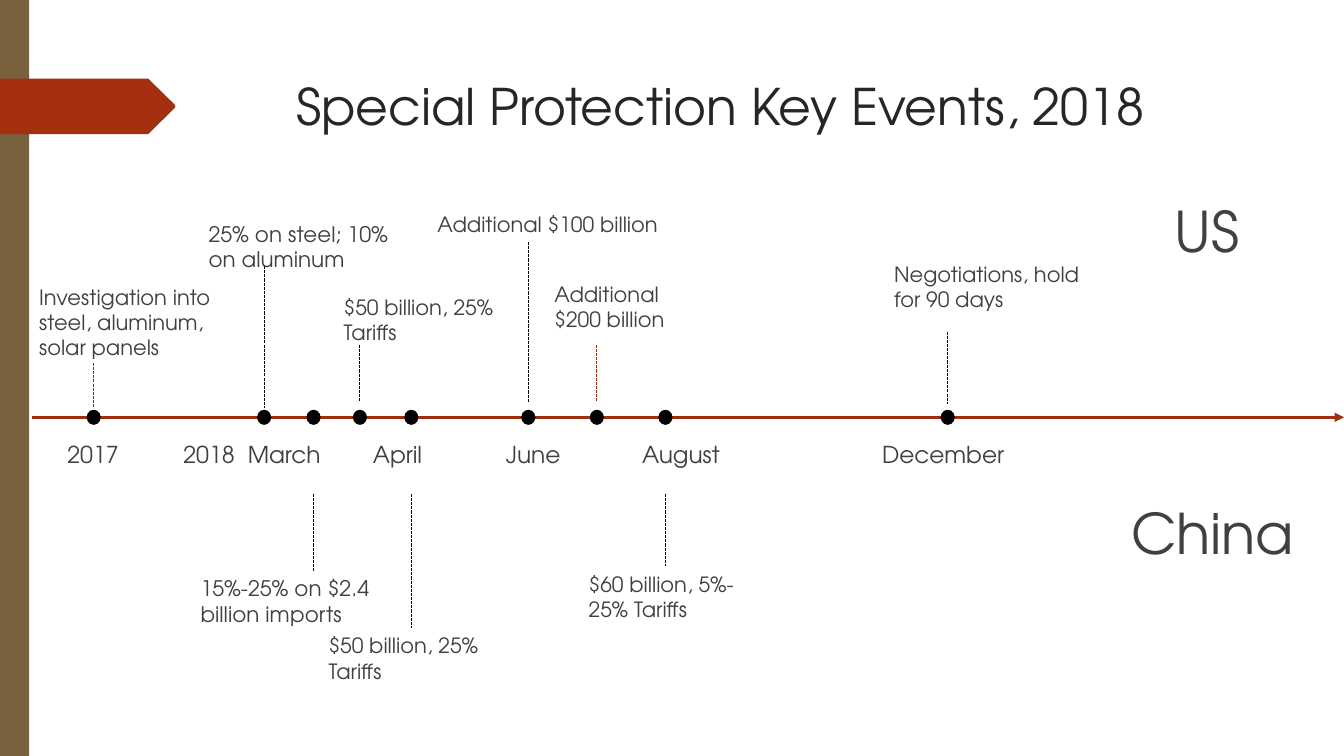
from collections import namedtuple
from lxml import etree
from pptx import Presentation
from pptx.dml.color import RGBColor
from pptx.enum.dml import MSO_LINE
from pptx.enum.shapes import MSO_CONNECTOR, MSO_SHAPE
from pptx.oxml.ns import qn
from pptx.util import Inches, Pt

FONT = "TeX Gyre Adventor"
WHITE = RGBColor(0xFF, 0xFF, 0xFF)
BROWN = RGBColor(0x77, 0x62, 0x3D)
RUST = RGBColor(0xA5, 0x30, 0x10)
DARK = RGBColor(0x9E, 0x2E, 0x0F)
BLACK = RGBColor(0, 0, 0)
INK = RGBColor(0x26, 0x26, 0x26)
GREY = RGBColor(0x40, 0x40, 0x40)

CELL = Inches(0.1)
COLS, ROWS = 133.3, 75
AXIS = 21.4
DOT_W, DOT_H = 1.4, 1.5

Box = namedtuple("Box", "left top width height")
Event = namedtuple("Event", "col stem start end text box size")

EVENTS = [
    Event(9.3, DARK, 16, 20.5, "Investigation into steel, aluminum, solar panels",
          Box(2.9, 7.7, 19.9, 7.1), 15),
    Event(26.2, BLACK, 6.4, 20.5, "25% on steel; 10% on aluminum",
          Box(19.7, 1.4, 19.9, 5.5), 15.3),
    Event(31.1, BLACK, 29, 36.6, "15%-25% on $2.4 billion imports",
          Box(18.9, 36.6, 19.9, 5.5), 15.3),
    Event(35.7, BLACK, 14.2, 19.9, "$50 billion, 25% Tariffs",
          Box(33.1, 8.7, 19.9, 5.5), 15),
    Event(40.8, BLACK, 29, 42.3, "$50 billion, 25% Tariffs",
          Box(31.6, 42.3, 19.9, 5.5), 15),
    Event(52.4, BLACK, 4, 19.9, "Additional $100 billion",
          Box(42.4, 0.5, 24.2, 5.5), 15),
    Event(59.2, DARK, 14.2, 19.9, "Additional $200 billion",
          Box(54, 7.4, 16.5, 5.5), 15),
    Event(66, BLACK, 29, 36.2, "$60 billion, 5%-25% Tariffs",
          Box(57.4, 36.2, 19.9, 5.5), 15),
    Event(94, BLACK, 12.9, 20.1, "Negotiations, hold for 90 days",
          Box(87.7, 5.4, 21.6, 5.5), 15),
]
MONTHS = [("2018", 11.5), ("March", 17.9), ("April", 30.3), ("June", 43.5),
          ("August", 57), ("December", 80.8)]


def cells(*counts):
    return [round(count * CELL) for count in counts]


def within(box, part):
    return Box(box.left + part.left, box.top + part.top, part.width, part.height)


def paint(shape, color):
    shape.shadow.inherit = False
    shape.fill.solid()
    shape.fill.fore_color.rgb = color
    shape.line.fill.background()


def write(slide, box, text, size, color=GREY):
    frame = slide.shapes.add_textbox(*cells(*box)).text_frame
    frame.word_wrap = True
    para = frame.paragraphs[0]
    para.text = text
    para.space_before = Pt(10)
    for run in para.runs:
        run.font.name = FONT
        run.font.size = Pt(size)
        run.font.color.rgb = color
    return para


def rule(slide, box, start, end, color, width):
    ends = [box.left + start[0], box.top + start[1],
            box.left + end[0], box.top + end[1]]
    line = slide.shapes.add_connector(MSO_CONNECTOR.STRAIGHT, *cells(*ends))
    line.line.color.rgb = color
    line.line.width = Pt(width)
    etree.SubElement(line.element.spPr, qn("a:effectLst"))
    return line


def draw_edge(slide, box):
    bar = slide.shapes.add_shape(MSO_SHAPE.RECTANGLE, *cells(*box))
    paint(bar, BROWN)


def draw_flag(slide, box):
    right, low = box.left + box.width, box.top + box.height
    neck, mid = right - 2.7, box.top + box.height / 2
    points = [(neck, box.top), (right - 0.1, mid - 0.2), (right, mid),
              (right - 0.1, mid + 0.2), (neck, low), (box.left, low)]
    outline = slide.shapes.build_freeform(*cells(box.left, box.top))
    outline.add_line_segments([cells(*point) for point in points], close=True)
    paint(outline.convert_to_shape(), RUST)


def draw_axis(slide, box):
    axis = rule(slide, box, (3.2, AXIS), (box.width, AXIS), DARK, 2.25)
    etree.SubElement(axis.line._get_or_add_ln(), qn("a:tailEnd"), type="triangle")
    place = within(box, Box(5.7, 23.2, 127.6, 3.6))
    text = "\t".join(["2017"] + [name for name, stop in MONTHS])
    props = write(slide, place, text, 16.6)._p.get_or_add_pPr()
    tabs = etree.SubElement(props, qn("a:tabLst"))
    for name, stop in MONTHS:
        etree.SubElement(tabs, qn("a:tab"), pos=str(cells(stop)[0]), algn="l")


def draw_event(slide, box, event):
    stem = rule(slide, box, (event.col, event.start), (event.col, event.end),
                event.stem, 0.75)
    stem.line.dash_style = MSO_LINE.SQUARE_DOT
    spot = Box(event.col - DOT_W / 2, AXIS - DOT_H / 2, DOT_W, DOT_H)
    dot = slide.shapes.add_shape(MSO_SHAPE.OVAL, *cells(*within(box, spot)))
    paint(dot, BLACK)
    write(slide, within(box, event.box), event.text, event.size)


def draw_timeline(slide, box):
    draw_axis(slide, box)
    for event in EVENTS:
        draw_event(slide, box, event)
    write(slide, within(box, Box(115.5, -1, 16.5, 15.2)), "US", 40)
    write(slide, within(box, Box(111.2, 29, 20.9, 15.2)), "China", 40)


def main():
    deck = Presentation()
    deck.slide_width, deck.slide_height = cells(COLS, ROWS)
    slide = deck.slides.add_slide(deck.slide_layouts[6])
    slide.background.fill.solid()
    slide.background.fill.fore_color.rgb = WHITE
    draw_edge(slide, Box(0, 0, 2.9, ROWS))
    draw_flag(slide, Box(0, 7.8, 17.4, 5.5))
    write(slide, Box(28.4, 7, 97.5, 14), "Special Protection Key Events, 2018", 36, INK)
    draw_timeline(slide, Box(0, 20, COLS, 48))
    deck.save("out.pptx")


if __name__ == "__main__":
    main()
